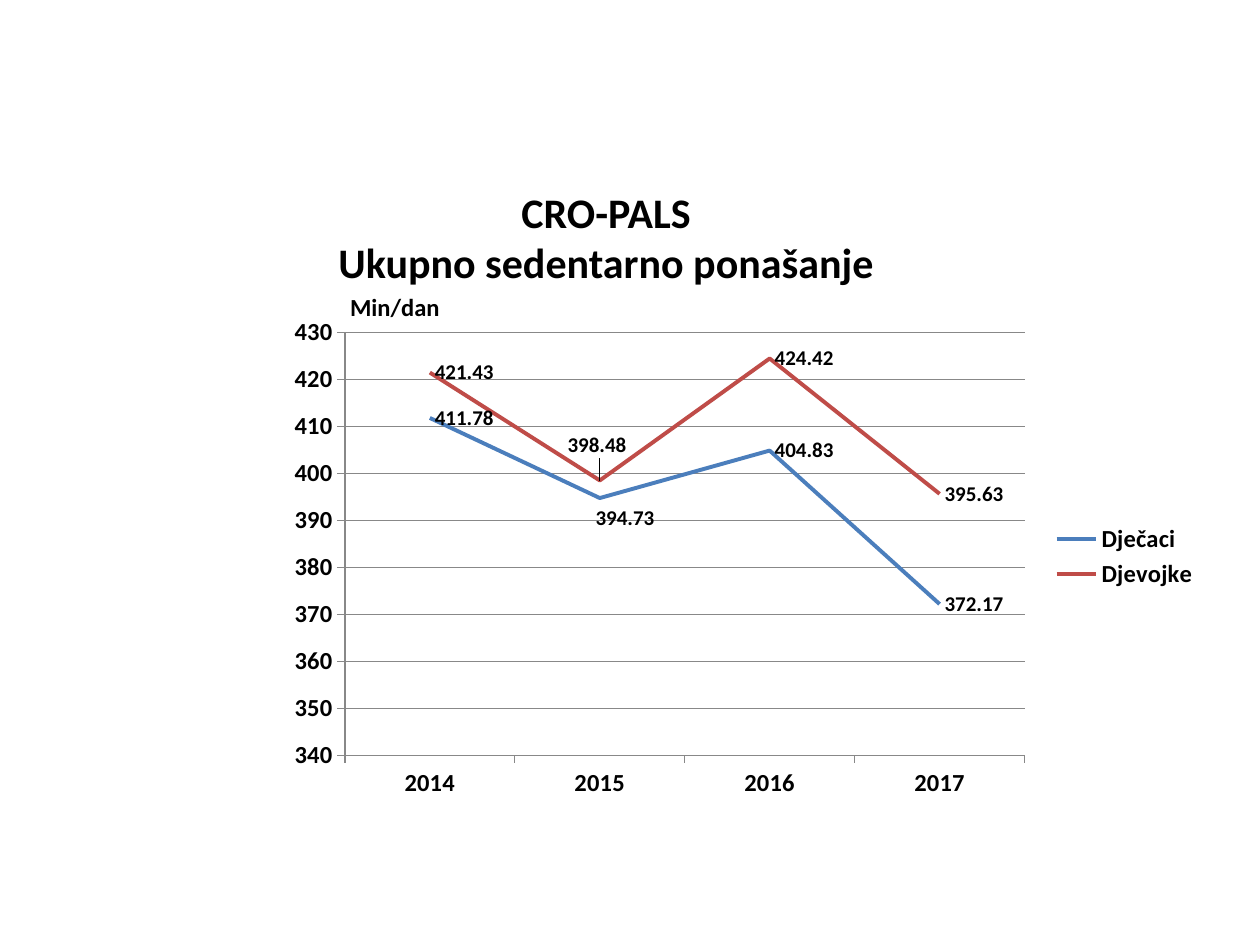
"""Build the CRO-PALS slide on total sedentary behaviour."""
import dataclasses

import pptx
import pptx.chart.data
import pptx.dml.color
import pptx.enum.chart
import pptx.enum.text
import pptx.oxml
import pptx.oxml.ns
import pptx.util

Inches = pptx.util.Inches
Pt = pptx.util.Pt
RGB = pptx.dml.color.RGBColor
Place = pptx.enum.chart.XL_LABEL_POSITION


@dataclasses.dataclass(frozen=True)
class Theme:
    """Hold the colours, font and type sizes of the slide."""
    ink: RGB = RGB.from_string("000000")
    grid: RGB = RGB.from_string("888888")
    boys: RGB = RGB.from_string("4B7EBC")
    girls: RGB = RGB.from_string("BF4C48")
    face: str = "Calibri"
    title: int = 24
    axis: int = 14
    label: int = 12
    base: int = 10


THEME = Theme()
YEARS = ["2014", "2015", "2016", "2017"]
SERIES = [
    ("Dječaci", [411.78, 394.73, 404.83, 372.17], THEME.boys, (-0.01, 0.04)),
    ("Djevojke", [421.43, 398.48, 424.42, 395.63], THEME.girls, (-0.04, -0.07)),
]


def style(font, size, bold=True):
    """Set face, size, weight and colour of a font."""
    font.name = THEME.face
    font.size = Pt(size)
    font.bold = bold
    font.color.rgb = THEME.ink


def stroke(line, color, width):
    """Set colour and width of a line."""
    line.color.rgb = color
    line.width = Pt(width)


def layout(parent, index, **values):
    """Give a chart part a manual layout at the given child index."""
    for old in parent.findall(pptx.oxml.ns.qn("c:layout")):
        parent.remove(old)
    items = "".join(f'<c:{key} val="{val}"/>' for key, val in values.items())
    parent.insert(index, pptx.oxml.parse_xml(
        f'<c:layout {pptx.oxml.ns.nsdecls("c")}>'
        f'<c:manualLayout>{items}</c:manualLayout></c:layout>'))


def add_text(slide, box, lines, size, align):
    """Place bold lines of text in a box."""
    frame = slide.shapes.add_textbox(*map(Inches, box)).text_frame
    frame.word_wrap = True
    frame.text = "\n".join(lines)
    for para in frame.paragraphs:
        para.alignment = align
        style(para.font, size)


def style_axis(axis):
    """Style the line, ticks and labels of an axis."""
    axis.major_tick_mark = pptx.enum.chart.XL_TICK_MARK.OUTSIDE
    axis.minor_tick_mark = pptx.enum.chart.XL_TICK_MARK.NONE
    stroke(axis.format.line, THEME.grid, 0.75)
    style(axis.tick_labels.font, THEME.axis)


def style_series(series, color, shift):
    """Style a line and its labels, moving the 2015 label by a shift."""
    series.smooth = False
    stroke(series.format.line, color, 2.25)
    labels = series.data_labels
    labels.show_value = True
    labels.position = Place.RIGHT
    style(labels.font, THEME.label)
    point = series.points[1].data_label
    point.position = Place.RIGHT
    style(point.font, THEME.label)
    mark = labels._element.find(pptx.oxml.ns.qn("c:dLbl"))
    layout(mark, 1, x=shift[0], y=shift[1])


def add_chart(slide, box):
    """Place the line chart of minutes a day in a box."""
    data = pptx.chart.data.CategoryChartData()
    data.categories = YEARS
    for name, values, _, _ in SERIES:
        data.add_series(name, values)
    chart = slide.shapes.add_chart(
        pptx.enum.chart.XL_CHART_TYPE.LINE, *map(Inches, box), data).chart
    chart.has_title = False
    style(chart.font, THEME.base, False)
    chart.has_legend = True
    chart.legend.position = pptx.enum.chart.XL_LEGEND_POSITION.RIGHT
    chart.legend.include_in_layout = False
    style(chart.legend.font, THEME.axis)
    style_axis(chart.category_axis)
    scale = chart.value_axis
    style_axis(scale)
    scale.minimum_scale, scale.maximum_scale, scale.major_unit = 340, 430, 10
    scale.has_major_gridlines = True
    stroke(scale.major_gridlines.format.line, THEME.grid, 0.75)
    plot = chart.plots[0]
    plot.vary_by_categories = False
    for series, (_, _, color, shift) in zip(plot.series, SERIES):
        style_series(series, color, shift)
    layout(chart._chartSpace.chart.plotArea, 0, layoutTarget="inner",
           xMode="edge", yMode="edge", x=0.07, y=0.05, w=0.73, h=0.85)


def main():
    """Build and save the slide."""
    deck = pptx.Presentation()
    deck.slide_width, deck.slide_height = Inches(10), Inches(7.5)
    slide = deck.slides.add_slide(deck.slide_layouts[6])
    align = pptx.enum.text.PP_ALIGN
    add_text(slide, (0.6, 1.43, 8.42, 0.91),
             ["CRO-PALS", "Ukupno sedentarno ponašanje"],
             THEME.title, align.CENTER)
    add_text(slide, (2.68, 2.27, 1, 0.34), ["Min/dan"], THEME.axis, align.LEFT)
    add_chart(slide, (2.22, 2.44, 7.39, 3.95))
    deck.save("out.pptx")


if __name__ == "__main__":
    main()
